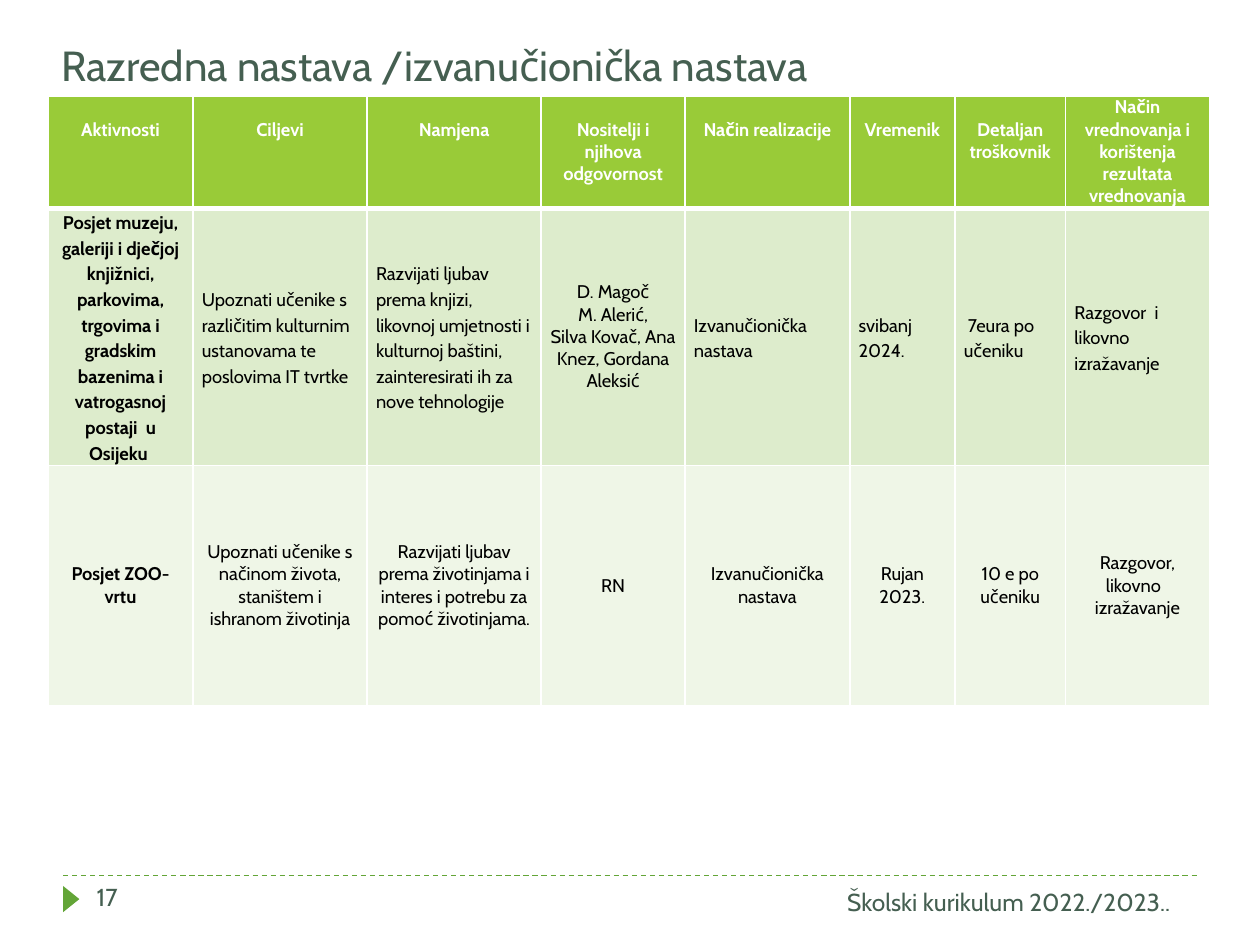
"""Build the school curriculum slide with its table of out-of-classroom activities."""
from lxml.etree import SubElement
from pptx import Presentation
from pptx.dml.color import RGBColor
from pptx.enum.dml import MSO_LINE
from pptx.enum.shapes import MSO_CONNECTOR, MSO_SHAPE
from pptx.enum.text import MSO_ANCHOR as Anchor, PP_ALIGN as Align
from pptx.oxml.ns import qn
from pptx.util import Cm, Pt

TITLE = "Razredna nastava /izvanučionička nastava"
FOOTER = "Školski kurikulum 2022./2023.."
PAGE = "17"
HEADINGS = ["Aktivnosti", "Ciljevi", "Namjena", "Nositelji i njihova odgovornost",
            "Način realizacije", "Vremenik", "Detaljan troškovnik",
            "Način vrednovanja i korištenja rezultata vrednovanja"]
MUSEUM = [
    "Posjet muzeju, galeriji i dječjoj knjižnici, parkovima, trgovima i gradskim "
    "bazenima i vatrogasnoj postaji  u Osijeku ",
    "Upoznati učenike s različitim kulturnim ustanovama te poslovima IT tvrtke",
    "Razvijati ljubav prema knjizi, likovnoj umjetnosti i kulturnoj baštini, "
    "zainteresirati ih za nove tehnologije",
    "D. Magoč\nM. Alerić,\nSilva Kovač, Ana Knez, Gordana Aleksić",
    "Izvanučionička nastava", "svibanj\n2024.", " 7eura po učeniku",
    "Razgovor  i  likovno izražavanje"]
ZOO = [
    "Posjet ZOO-vrtu",
    "Upoznati učenike s načinom života, staništem i ishranom životinja",
    "Razvijati ljubav prema životinjama i interes i potrebu za pomoć životinjama.",
    "RN", "Izvanučionička nastava", "Rujan 2023.", "10 e po učeniku",
    "Razgovor, likovno   izražavanje"]
ROWS = [HEADINGS, MUSEUM, ZOO]
COLUMN_WIDTHS = [2.92, 3.51, 3.51, 2.9, 3.32, 2.12, 2.23, 2.9]
ROW_HEIGHTS = [2.26, 5.18, 4.85]

THEME = {
    "font": "Cabin", "title_size": 24, "footer_size": 14, "table_size": 10.5,
    "heading": "455F51", "accent": "63A537", "border": "FFFFFF",
    "row_fills": ["99CB38", "DDECCC", "EFF6E7"],
    "row_texts": ["FFFFFF", "000000", "000000"],
}


def rgb(value):
    return RGBColor.from_string(value)


def apply(target, formats):
    for name, value in formats.items():
        setattr(target, name, value)


def write(frame, text, size, color, bold=False, **paragraph_format):
    frame.text = text
    for paragraph in frame.paragraphs:
        apply(paragraph, paragraph_format)
        for run in paragraph.runs:
            apply(run.font, {"name": THEME["font"], "size": Pt(size), "bold": bold})
            run.font.color.rgb = rgb(color)


def add_label(slide, text, box, size, align=Align.LEFT, anchor=Anchor.TOP):
    frame = slide.shapes.add_textbox(*map(Cm, box)).text_frame
    apply(frame, {"word_wrap": True, "vertical_anchor": anchor})
    write(frame, text, size, THEME["heading"], alignment=align)


def add_border(cell, side, points):
    properties = cell._tc.get_or_add_tcPr()
    line = SubElement(properties, qn(f"a:ln{side}"), w=str(Pt(points)))
    SubElement(SubElement(line, qn("a:solidFill")), qn("a:srgbClr"), val=THEME["border"])


def fill_cell(cell, text, row, column):
    header, museum = row == 0, row == 1
    short_heading = header and column < len(HEADINGS) - 1
    apply(cell, {
        "margin_left": Cm(0.18), "margin_right": Cm(0.18), "margin_bottom": 0,
        "margin_top": Cm(0.45) if short_heading else 0,
        "vertical_anchor": Anchor.TOP if header else Anchor.MIDDLE,
    })
    for side in "LRTB":
        thick = (row, side) in [(0, "B"), (1, "T")]
        add_border(cell, side, 3 if thick else 1)
    cell.fill.solid()
    cell.fill.fore_color.rgb = rgb(THEME["row_fills"][row])
    write(cell.text_frame, text, THEME["table_size"], THEME["row_texts"][row],
          bold=header or column == 0,
          alignment=Align.LEFT if museum and column not in (0, 3) else Align.CENTER,
          line_spacing=1.15 if museum and column != 3 else 1.0)


def add_activities(slide):
    box = (0.97, 1.94, sum(COLUMN_WIDTHS), sum(ROW_HEIGHTS))
    table = slide.shapes.add_table(len(ROWS), len(HEADINGS), *map(Cm, box)).table
    for column, width in zip(table.columns, COLUMN_WIDTHS):
        column.width = Cm(width)
    for row, height in zip(table.rows, ROW_HEIGHTS):
        row.height = Cm(height)
    for row, texts in enumerate(ROWS):
        for column, text in enumerate(texts):
            fill_cell(table.cell(row, column), text, row, column)


def add_footer(slide):
    ends = map(Cm, (1.27, 17.65, 24.13, 17.65))
    rule = slide.shapes.add_connector(MSO_CONNECTOR.STRAIGHT, *ends)
    apply(rule.line, {"width": Pt(0.75), "dash_style": MSO_LINE.DASH})
    rule.line.color.rgb = rgb(THEME["accent"])
    SubElement(rule._element.spPr, qn("a:effectLst"))

    marker = slide.shapes.add_shape(MSO_SHAPE.ISOSCELES_TRIANGLE,
                                    *map(Cm, (1.17, 17.96, 0.53, 0.33)))
    marker.rotation = 90
    marker.shadow.inherit = False
    marker.fill.solid()
    marker.fill.fore_color.rgb = rgb(THEME["accent"])
    marker.line.fill.background()

    add_label(slide, FOOTER, (14.12, 17.75, 9.73, 1.02), THEME["footer_size"], Align.RIGHT)
    add_label(slide, PAGE, (1.7, 17.65, 5.51, 1.02), THEME["footer_size"])


def main():
    deck = Presentation()
    apply(deck, {"slide_width": Cm(25.4), "slide_height": Cm(19.05)})
    slide = deck.slides.add_slide(deck.slide_layouts[6])
    add_label(slide, TITLE, (0.99, 0.38, 23.42, 1.55), THEME["title_size"],
              anchor=Anchor.BOTTOM)
    add_footer(slide)
    add_activities(slide)
    deck.save("out.pptx")


if __name__ == "__main__":
    main()
